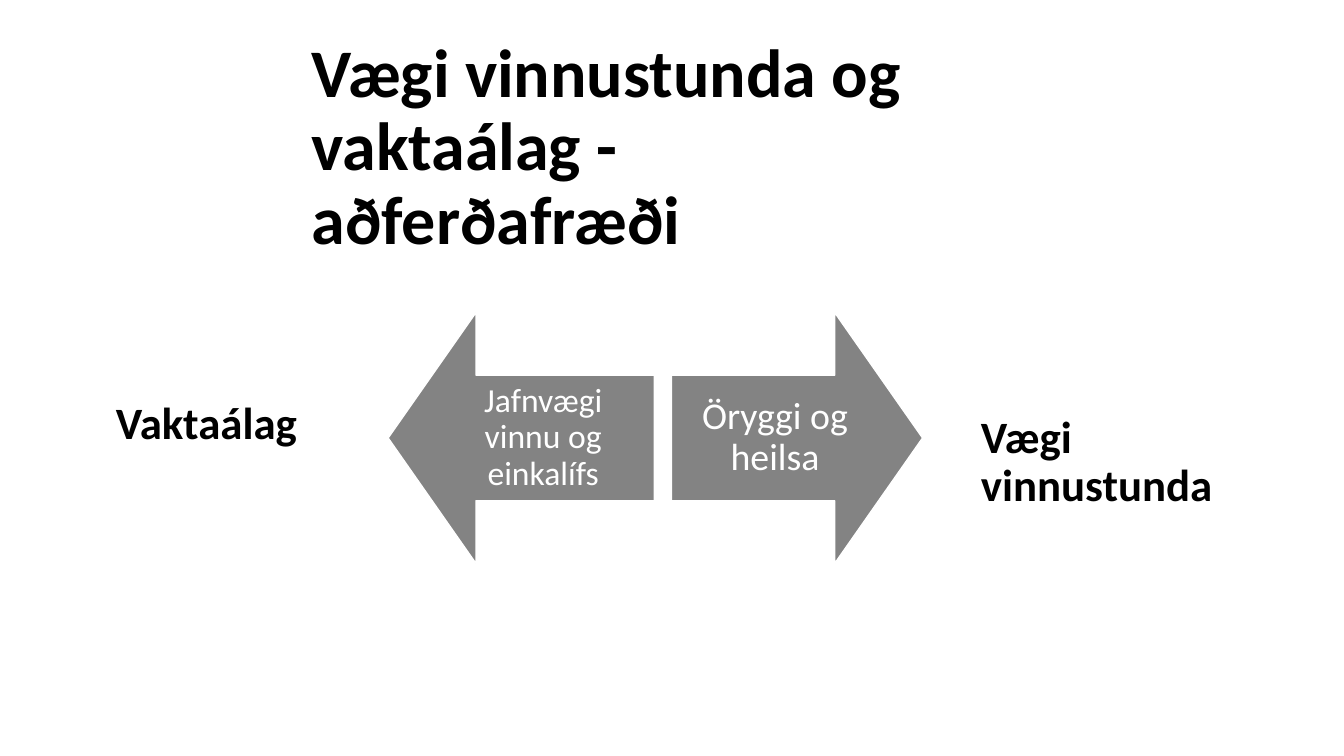
"""Build the slide on the weight of working hours and shift premiums."""
from dataclasses import dataclass

from pptx import Presentation
from pptx.dml.color import RGBColor
from pptx.enum.shapes import MSO_SHAPE
from pptx.enum.text import MSO_ANCHOR, MSO_AUTO_SIZE, PP_ALIGN
from pptx.util import Emu, Pt

EMU_PER_PX = 9144


@dataclass(frozen=True)
class Theme:
    font: str = "Calibri"
    ink: RGBColor = RGBColor(0x00, 0x00, 0x00)
    paper: RGBColor = RGBColor(0xFF, 0xFF, 0xFF)
    arrow: RGBColor = RGBColor(0x83, 0x83, 0x83)
    title_size: float = 48.6
    label_size: float = 32
    left_arrow_size: float = 24
    right_arrow_size: float = 27
    line_spacing: float = 0.9


@dataclass(frozen=True)
class Box:
    left: int
    top: int
    width: int
    height: int


@dataclass(frozen=True)
class Label:
    text: str
    box: Box


@dataclass(frozen=True)
class Arrow:
    text: str
    box: Box
    preset: MSO_SHAPE
    size: float
    inset: int


THEME = Theme()
TITLE = Label("Vægi vinnustunda og vaktaálag - aðferðafræði", Box(299, 33, 697, 145))
LABELS = (
    Label("Vaktaálag", Box(105, 361, 238, 90)),
    Label("Vægi vinnustunda", Box(963, 221, 300, 291)),
)
ARROWS = (
    Arrow("Jafnvægi vinnu og einkalífs", Box(385, 310, 264, 249),
          MSO_SHAPE.LEFT_ARROW, THEME.left_arrow_size, 19),
    Arrow("Öryggi og heilsa", Box(666, 310, 249, 249),
          MSO_SHAPE.RIGHT_ARROW, THEME.right_arrow_size, 21),
)


def px(length: int) -> Emu:
    """Turn a length in px into EMU."""
    return Emu(length * EMU_PER_PX)


def frame(box: Box) -> tuple[Emu, Emu, Emu, Emu]:
    """Give a box as left, top, width and height in EMU."""
    return px(box.left), px(box.top), px(box.width), px(box.height)


def write(shape, text: str, *, size: float, color: RGBColor = THEME.ink,
          bold: bool = False, align: PP_ALIGN = PP_ALIGN.LEFT,
          anchor: MSO_ANCHOR = MSO_ANCHOR.TOP,
          inset_x: int = 10, inset_y: int = 5) -> None:
    """Put formatted text into a shape."""
    body = shape.text_frame
    body.word_wrap = True
    body.auto_size = MSO_AUTO_SIZE.NONE
    body.vertical_anchor = anchor
    body.margin_left = body.margin_right = px(inset_x)
    body.margin_top = body.margin_bottom = px(inset_y)
    para = body.paragraphs[0]
    para.alignment = align
    para.line_spacing = THEME.line_spacing
    span = para.add_run()
    span.text = text
    span.font.name = THEME.font
    span.font.size = Pt(size)
    span.font.bold = bold
    span.font.color.rgb = color


def draw_title(page, title: Label) -> None:
    """Move and fill the title placeholder."""
    shape = page.shapes.title
    shape.left, shape.top, shape.width, shape.height = frame(title.box)
    write(shape, title.text, size=THEME.title_size, bold=True)


def draw_label(page, label: Label) -> None:
    """Add a bold label resting on the bottom of its box."""
    shape = page.shapes.add_textbox(*frame(label.box))
    write(shape, label.text, size=THEME.label_size, bold=True,
          anchor=MSO_ANCHOR.BOTTOM)


def draw_arrow(page, arrow: Arrow) -> None:
    """Add a block arrow with centred text."""
    shape = page.shapes.add_shape(arrow.preset, *frame(arrow.box))
    shape.shadow.inherit = False
    shape.adjustments[0] = 0.5
    shape.adjustments[1] = 0.35
    shape.fill.solid()
    shape.fill.fore_color.rgb = THEME.arrow
    shape.line.color.rgb = THEME.paper
    shape.line.width = Pt(1)
    write(shape, arrow.text, size=arrow.size, color=THEME.paper,
          align=PP_ALIGN.CENTER, anchor=MSO_ANCHOR.MIDDLE,
          inset_x=arrow.inset, inset_y=arrow.inset)


def main() -> None:
    """Build and save the deck."""
    deck = Presentation()
    deck.slide_width, deck.slide_height = px(1333), px(750)
    page = deck.slides.add_slide(deck.slide_layouts.get_by_name("Title Only"))
    draw_title(page, TITLE)
    for label in LABELS:
        draw_label(page, label)
    for arrow in ARROWS:
        draw_arrow(page, arrow)
    deck.save("out.pptx")


if __name__ == "__main__":
    main()
